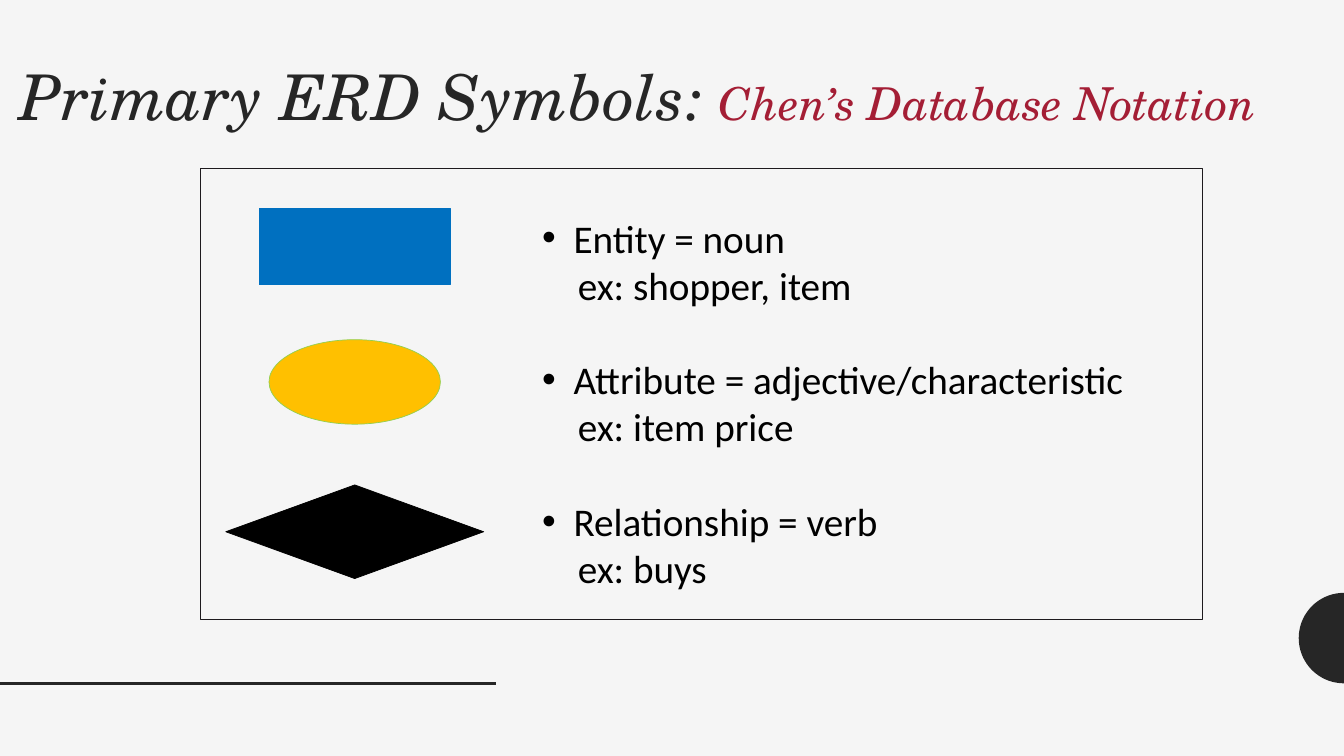
import math

import lxml.etree
import pptx
import pptx.dml.color
import pptx.enum.shapes
import pptx.enum.text
import pptx.oxml.ns
import pptx.util

Cm, Pt = pptx.util.Cm, pptx.util.Pt
RGB = pptx.dml.color.RGBColor.from_string
MSO = pptx.enum.shapes.MSO_SHAPE
qn = pptx.oxml.ns.qn

THEME = {
    "bg": "F5F5F5", "dark": "262626", "accent": "A41E35", "frame": "1D1A1D",
    "text": "000000", "blue": "0070C0", "amber": "FFC000", "green": "92D050",
    "title_font": "TeX Gyre Schola", "body_font": "Calibri",
    "title_size": 45, "subtitle_size": 32.4, "body_size": 28, "body_pitch": 33.7,
    "thin": 0.5, "rule": 2,
}


def paint(shape, fill, line):
    """Set fill and outline; None leaves that part empty."""
    shape.shadow.inherit = False
    if fill:
        shape.fill.solid()
        shape.fill.fore_color.rgb = RGB(THEME[fill])
    else:
        shape.fill.background()
    if line:
        shape.line.color.rgb = RGB(THEME[line])
        shape.line.width = Pt(THEME["thin"])
    else:
        shape.line.fill.background()


def add_run(p, text, color, **font):
    r = p.add_run()
    r.text = text
    r.font.color.rgb = RGB(THEME[color])
    for name, value in font.items():
        setattr(r.font, name, value)


prs = pptx.Presentation()
prs.slide_width, prs.slide_height = Cm(33.87), Cm(19.05)
s = prs.slides.add_slide(prs.slide_layouts[1])
s.background.fill.solid()
s.background.fill.fore_color.rgb = RGB(THEME["bg"])
title, body = s.placeholders

# Half disc on the right edge
cy, radius = 16.08, 1.14
angles = [math.radians(90 + 5 * i) for i in range(37)]
points = [(prs.slide_width + Cm(radius * math.cos(a)), Cm(cy - radius * math.sin(a)))
          for a in angles]
fb = s.shapes.build_freeform(*points[0])
fb.add_line_segments(points[1:], close=True)
paint(fb.convert_to_shape(), "dark", None)

# Rule at the bottom left
rule = s.shapes.add_connector(pptx.enum.shapes.MSO_CONNECTOR.STRAIGHT,
                              0, Cm(17.22), Cm(12.5), Cm(17.22))
rule.line.color.rgb = RGB(THEME["dark"])
rule.line.width = Pt(THEME["rule"])
lxml.etree.SubElement(rule.element.spPr, qn("a:effectLst"))

# Frame
frame = s.shapes.add_shape(MSO.FLOWCHART_PROCESS, Cm(5.05), Cm(4.24), Cm(25.25), Cm(11.38))
paint(frame, None, "frame")

# Symbols, centred on one column
center = 8.94
symbols = [
    (MSO.FLOWCHART_PROCESS, 5.26, 4.8, 1.91, "blue", "blue"),
    (MSO.OVAL, 8.56, 4.32, 2.13, "amber", "green"),
    (MSO.FLOWCHART_DECISION, 12.22, 6.5, 2.36, "text", "text"),
]
for kind, top, width, height, fill, line in symbols:
    sp = s.shapes.add_shape(kind, Cm(center - width / 2), Cm(top), Cm(width), Cm(height))
    paint(sp, fill, line)

# Placeholder boxes
boxes = [(title, 0, 1.55, 31.9, 3.18), (body, 13.41, 5.26, 16.92, 9.83)]
frame_format = {
    "word_wrap": True,
    "auto_size": pptx.enum.text.MSO_AUTO_SIZE.NONE,
    "vertical_anchor": pptx.enum.text.MSO_ANCHOR.TOP,
}
for sp, *place in boxes:
    sp.left, sp.top, sp.width, sp.height = map(Cm, place)
    for name, value in frame_format.items():
        setattr(sp.text_frame, name, value)

# Title
p = title.text_frame.paragraphs[0]
p.alignment = pptx.enum.text.PP_ALIGN.RIGHT
p.line_spacing = 0.9
title_parts = [
    ("Primary ERD Symbols: ", "dark", "title_size"),
    ("Chen’s Database Notation", "accent", "subtitle_size"),
]
for text, color, size in title_parts:
    add_run(p, text, color, name=THEME["title_font"], size=Pt(THEME[size]), italic=True)

# Meanings, each with an example line below
meanings = [
    ("Entity = noun", "ex: shopper, item"),
    ("Attribute = adjective/characteristic", "ex: item price"),
    ("Relationship = verb", "ex: buys"),
]
lines = [(text, i, j) for i, pair in enumerate(meanings) for j, text in enumerate(pair)]
tf = body.text_frame
for text, group, is_example in lines:
    p = tf.add_paragraph() if group or is_example else tf.paragraphs[0]
    pitch = Pt(THEME["body_pitch"])
    paragraph_format = {
        "alignment": pptx.enum.text.PP_ALIGN.LEFT,
        "line_spacing": pitch,
        "space_before": pitch if group and not is_example else Pt(0),
        "space_after": Pt(0),
    }
    for name, value in paragraph_format.items():
        setattr(p, name, value)
    pPr = p._p.get_or_add_pPr()
    margin, indent = (Cm(0.9), 0) if is_example else (Cm(0.79), -Cm(0.79))
    pPr.set("marL", str(margin))
    pPr.set("indent", str(indent))
    if is_example:
        lxml.etree.SubElement(pPr, qn("a:buNone"))
    else:
        lxml.etree.SubElement(pPr, qn("a:buFont"), typeface="Arial")
        lxml.etree.SubElement(pPr, qn("a:buChar"), char="•")
    add_run(p, text, "text", name=THEME["body_font"], size=Pt(THEME["body_size"]))

prs.save("out.pptx")
